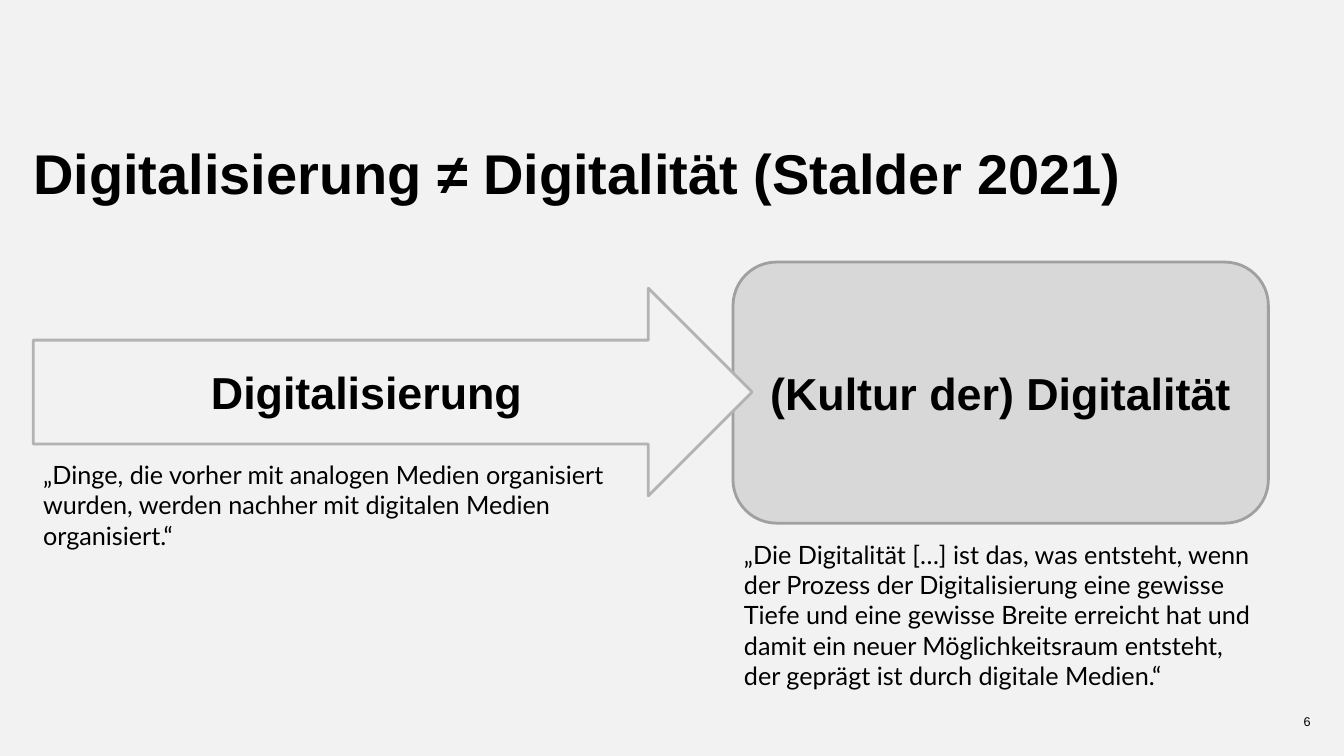
from dataclasses import dataclass

from pptx import Presentation
from pptx.dml.color import RGBColor
from pptx.enum.shapes import MSO_SHAPE
from pptx.enum.text import MSO_ANCHOR, PP_ALIGN
from pptx.util import Pt

ARROW, ROUNDED = MSO_SHAPE.RIGHT_ARROW, MSO_SHAPE.ROUNDED_RECTANGLE
TOP, MIDDLE = MSO_ANCHOR.TOP, MSO_ANCHOR.MIDDLE
LEFT, CENTER, RIGHT = PP_ALIGN.LEFT, PP_ALIGN.CENTER, PP_ALIGN.RIGHT
PX = 9144  # 100 px to the inch


@dataclass(frozen=True)
class Theme:
    background: str = "F2F2F2"
    ink: str = "000000"
    culture_fill: str = "D8D8D8"
    culture_line: str = "A0A0A0"
    arrow_line: str = "B3B3B3"
    heading_font: str = "Arial"
    quote_font: str = "Lato"
    title_size: int = 40
    label_size: int = 32
    quote_size: int = 18
    number_size: int = 9
    outline: int = 2


THEME = Theme()


def emu(*lengths):
    return [length * PX for length in lengths]


def write(frame, text, size, font=THEME.heading_font, bold=False, align=LEFT,
          anchor=TOP, margins=(10, 5), spacing=None):
    """Fill a text frame with one formatted paragraph."""
    frame.word_wrap = True
    frame.vertical_anchor = anchor
    frame.margin_left = frame.margin_right = margins[0] * PX
    frame.margin_top = frame.margin_bottom = margins[1] * PX
    paragraph = frame.paragraphs[0]
    paragraph.alignment = align
    if spacing:
        paragraph.line_spacing = spacing
    run = paragraph.add_run()
    run.text = text
    run.font.name, run.font.size, run.font.bold = font, Pt(size), bold
    run.font.color.rgb = RGBColor.from_string(THEME.ink)


def add_title(slide, box, text):
    title = slide.shapes.title
    title.left, title.top, title.width, title.height = emu(*box)
    write(title.text_frame, text, THEME.title_size, bold=True,
          margins=(0, 0), spacing=0.9)


def add_concept(slide, box, preset, label, fill, line, quote, quote_offset, quote_size):
    """Place a labelled shape, and its quote relative to the shape's corner."""
    left, top, width, height = box
    concept = slide.shapes.add_shape(preset, *emu(left, top, width, height))
    concept.shadow.inherit = False
    concept.fill.solid()
    concept.fill.fore_color.rgb = RGBColor.from_string(fill)
    concept.line.color.rgb = RGBColor.from_string(line)
    concept.line.width = Pt(THEME.outline)
    write(concept.text_frame, label, THEME.label_size, bold=True,
          align=CENTER, anchor=MIDDLE)

    dx, dy = quote_offset
    quotation = slide.shapes.add_textbox(*emu(left + dx, top + dy, *quote_size))
    write(quotation.text_frame, quote, THEME.quote_size, THEME.quote_font)


def add_page_number(slide, box, number):
    page_number = slide.shapes.add_textbox(*emu(*box))
    write(page_number.text_frame, number, THEME.number_size, align=RIGHT,
          margins=(0, 0))


def main():
    deck = Presentation()
    deck.slide_width, deck.slide_height = emu(1333, 750)
    slide = deck.slides.add_slide(deck.slide_layouts[5])
    slide.background.fill.solid()
    slide.background.fill.fore_color.rgb = RGBColor.from_string(THEME.background)

    add_title(slide, (33, 145, 1268, 75), "Digitalisierung ≠ Digitalität (Stalder 2021)")
    add_page_number(slide, (1261, 708, 39, 22), "6")

    # The culture of digitality lies behind the arrow that leads to it
    add_concept(
        slide, (727, 260, 531, 259), ROUNDED, "(Kultur der) Digitalität",
        THEME.culture_fill, THEME.culture_line,
        "„Die Digitalität […] ist das, was entsteht, wenn der Prozess der "
        "Digitalisierung eine gewisse Tiefe und eine gewisse Breite erreicht hat "
        "und damit ein neuer Möglichkeitsraum entsteht, der geprägt ist durch "
        "digitale Medien.“",
        quote_offset=(1, 270), quote_size=(531, 162))

    # Digitalisation as a process
    add_concept(
        slide, (33, 286, 713, 206), ARROW, "Digitalisierung",
        THEME.background, THEME.arrow_line,
        "„Dinge, die vorher mit analogen Medien organisiert wurden, werden "
        "nachher mit digitalen Medien organisiert.“",
        quote_offset=(0, 165), quote_size=(587, 101))

    deck.save("out.pptx")


if __name__ == "__main__":
    main()
